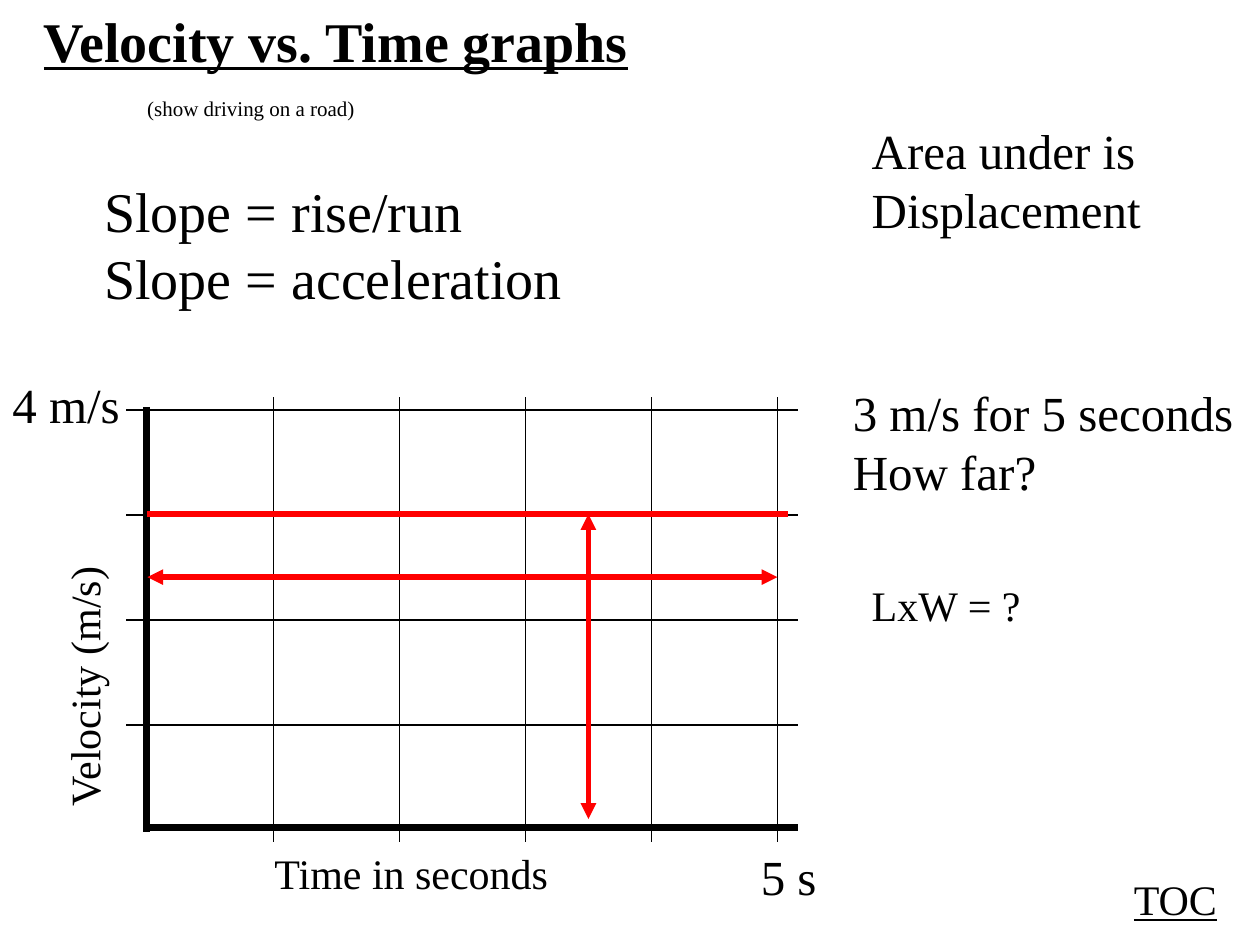
from lxml.etree import SubElement
from pptx import Presentation
from pptx.dml.color import RGBColor
from pptx.enum.shapes import MSO_CONNECTOR
from pptx.enum.text import MSO_AUTO_SIZE
from pptx.oxml.ns import qn
from pptx.util import Inches, Pt

BLACK, RED = "000000", "FF0000"

deck = Presentation()
deck.slide_width, deck.slide_height = Inches(10), Inches(7.5)
page = deck.slides.add_slide(deck.slide_layouts[6])


def add_text(text, left, top, width, height, size=24, bold=False,
             underline=False, rotation=0):
    """Add an unwrapped text box with one paragraph per line of text."""
    box = page.shapes.add_textbox(
        Inches(left), Inches(top), Inches(width), Inches(height))
    box.rotation = rotation
    frame = box.text_frame
    frame.word_wrap = False
    frame.auto_size = MSO_AUTO_SIZE.SHAPE_TO_FIT_TEXT
    frame.text = text
    for para in frame.paragraphs:
        for span in para.runs:
            font = span.font
            font.name, font.size = "Times New Roman", Pt(size)
            font.bold, font.underline = bold, underline
            font.color.rgb = RGBColor.from_string(BLACK)


def add_line(x1, y1, x2, y2, color=BLACK, weight=1, arrows=False):
    """Add a straight line, with arrowheads at both ends if asked."""
    line = page.shapes.add_connector(
        MSO_CONNECTOR.STRAIGHT, Inches(x1), Inches(y1), Inches(x2), Inches(y2))
    line.line.color.rgb = RGBColor.from_string(color)
    line.line.width = Pt(weight)
    if arrows:
        for end in ("a:headEnd", "a:tailEnd"):
            SubElement(line.line._get_or_add_ln(), qn(end), type="triangle")
    SubElement(line._element.spPr, qn("a:effectLst"))


# Headings and link
add_text("Velocity vs. Time graphs", 0.25, 0, 4.89, 0.63,
         size=32, bold=True, underline=True)
add_text("TOC", 8.9, 6.88, 0.87, 0.5, underline=True)

# Axes with their names
add_line(1.16, 3.23, 1.16, 6.6, weight=4)
add_text("Velocity (m/s)", -0.4, 5.18, 2.13, 0.5, rotation=270)
add_line(1.15, 6.57, 6.33, 6.57, weight=4)
add_text("Time in seconds", 2.08, 6.68, 2.38, 0.5)

# Grid: one column per second, one row per metre per second
for second in range(1, 6):
    x = 1.17 + second
    add_line(x, 6.68, x, 3.15)
add_text("5 s", 5.94, 6.67, 0.64, 0.57, size=28)
for speed in range(1, 5):
    y = 6.59 - speed * 2.5 / 3
    add_line(1, y, 6.33, y)
add_text("4 m/s", 0, 2.92, 1.05, 0.57, size=28)

# Notes around the graph
add_text("Slope = rise/run\nSlope = acceleration", 0.73, 1.35, 3.84, 1.17, size=32)
add_text("(show driving on a road)", 1.07, 0.71, 1.85, 0.3, size=12)
add_text("Area under is\nDisplacement", 6.82, 0.91, 2.39, 1.03, size=28)

# Constant velocity and the sides of the area below it
add_line(1.17, 4.08, 6.25, 4.08, color=RED, weight=3)
add_text("3 m/s for 5 seconds\nHow far?", 6.67, 2.99, 3.22, 1.03, size=28)
add_line(1.17, 4.58, 6.17, 4.58, color=RED, weight=3, arrows=True)
add_line(4.67, 6.5, 4.67, 4.08, color=RED, weight=3, arrows=True)
add_text("LxW = ?", 6.82, 4.55, 1.39, 0.5)

deck.save("out.pptx")
